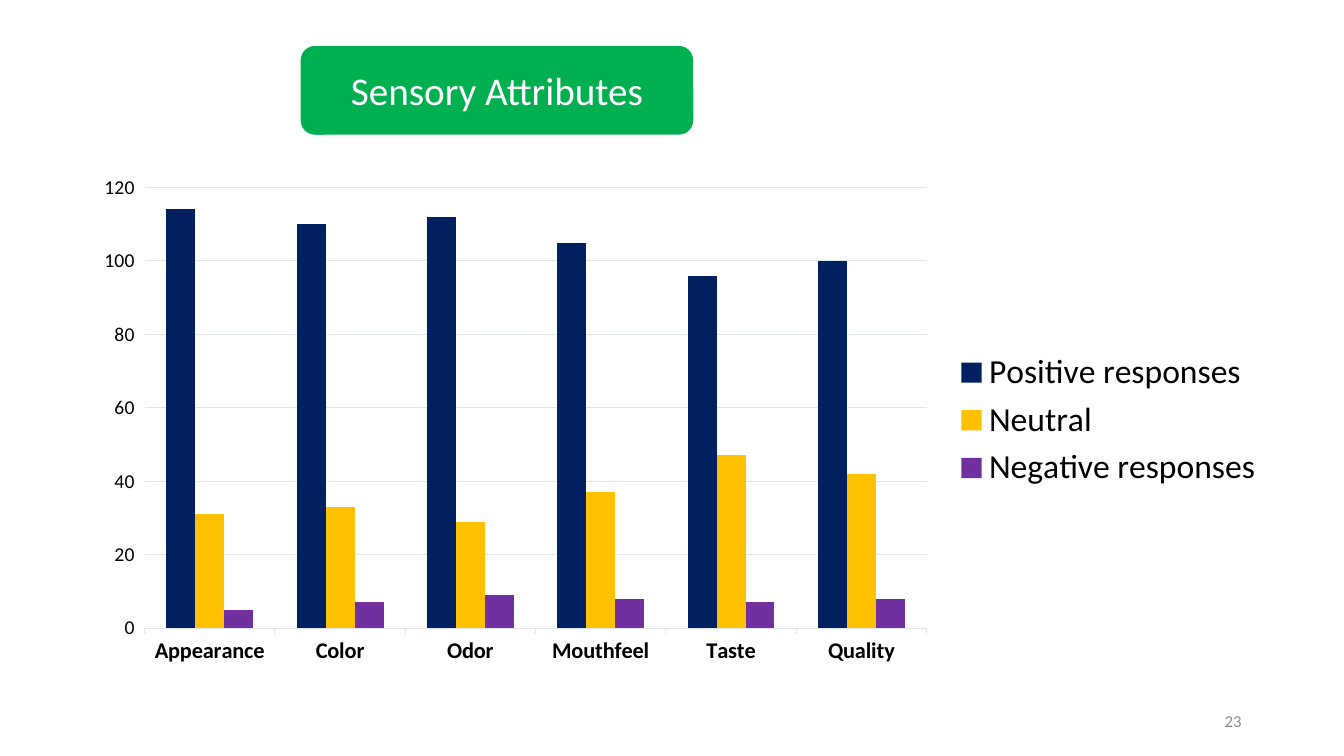
from dataclasses import dataclass

from pptx import Presentation
from pptx import util as u
from pptx.chart import data as chart_data
from pptx.dml.color import RGBColor
from pptx.enum import chart as charts, shapes, text

FONT = "Calibri"
BLACK, WHITE, GRAY, GRID = "000000", "FFFFFF", "8C8C8C", "E0E5EB"
ATTRIBUTES = ["Appearance", "Color", "Odor", "Mouthfeel", "Taste", "Quality"]


@dataclass
class Box:
    left: float
    top: float
    width: float
    height: float

    def points(self) -> tuple:
        return tuple(u.Pt(n) for n in (self.left, self.top, self.width, self.height))


@dataclass
class Responses:
    name: str
    counts: list[int]
    color: str


RESPONSES = [
    Responses("Positive responses ", [114, 110, 112, 105, 96, 100], "002060"),
    Responses("Neutral ", [31, 33, 29, 37, 47, 42], "FFC000"),
    Responses("Negative responses", [5, 7, 9, 8, 7, 8], "7030A0"),
]


def rgb(color: str) -> RGBColor:
    return RGBColor.from_string(color)


def style_font(font, size: float, color: str = BLACK, bold: bool = False) -> None:
    font.name = FONT
    font.size = u.Pt(size)
    font.bold = bold
    font.color.rgb = rgb(color)


def style_line(line, color: str, width: float) -> None:
    line.color.rgb = rgb(color)
    line.width = u.Pt(width)


def write(shape, wording: str, size: float, color: str, align) -> None:
    frame = shape.text_frame
    frame.text = wording
    frame.word_wrap = True
    frame.vertical_anchor = text.MSO_ANCHOR.MIDDLE
    paragraph = frame.paragraphs[0]
    paragraph.alignment = align
    style_font(paragraph.runs[0].font, size, color)


def add_heading(slide, box: Box) -> None:
    heading = slide.shapes.add_shape(shapes.MSO_SHAPE.ROUNDED_RECTANGLE, *box.points())
    heading.shadow.inherit = False
    heading.fill.solid()
    heading.fill.fore_color.rgb = rgb("00B050")
    style_line(heading.line, WHITE, 1.5)
    write(heading, "Sensory Attributes", 28, WHITE, text.PP_ALIGN.CENTER)


def add_responses(slide, box: Box) -> None:
    table = chart_data.CategoryChartData()
    table.categories = ATTRIBUTES
    for group in RESPONSES:
        table.add_series(group.name, group.counts)
    chart = slide.shapes.add_chart(
        charts.XL_CHART_TYPE.COLUMN_CLUSTERED, *box.points(), table
    ).chart
    style_font(chart.font, 10)
    chart.has_title = False

    columns = chart.plots[0]
    columns.gap_width = 150
    columns.overlap = 0
    columns.vary_by_categories = False
    for series, group in zip(columns.series, RESPONSES):
        series.invert_if_negative = False
        series.format.fill.solid()
        series.format.fill.fore_color.rgb = rgb(group.color)

    attributes, counts = chart.category_axis, chart.value_axis
    for axis in (attributes, counts):
        axis.major_tick_mark = charts.XL_TICK_MARK.OUTSIDE
        axis.minor_tick_mark = charts.XL_TICK_MARK.NONE
    style_font(attributes.tick_labels.font, 16, bold=True)
    style_line(attributes.format.line, GRID, 0.75)
    style_font(counts.tick_labels.font, 14)
    counts.format.line.fill.background()
    counts.minimum_scale, counts.maximum_scale, counts.major_unit = 0, 120, 20
    style_line(counts.major_gridlines.format.line, GRID, 0.75)

    chart.has_legend = True
    chart.legend.position = charts.XL_LEGEND_POSITION.RIGHT
    chart.legend.include_in_layout = False
    style_font(chart.legend.font, 24)


def main() -> None:
    deck = Presentation()
    deck.slide_width, deck.slide_height = u.Pt(960), u.Pt(540)
    slide = deck.slides.add_slide(deck.slide_layouts[6])
    page_number = slide.shapes.add_textbox(*Box(678, 500.5, 216, 28.75).points())
    write(page_number, "23", 12, GRAY, text.PP_ALIGN.RIGHT)
    add_heading(slide, Box(214, 32, 282, 65))
    add_responses(slide, Box(57.5, 118, 853, 364.5))
    deck.save("out.pptx")


if __name__ == "__main__":
    main()
